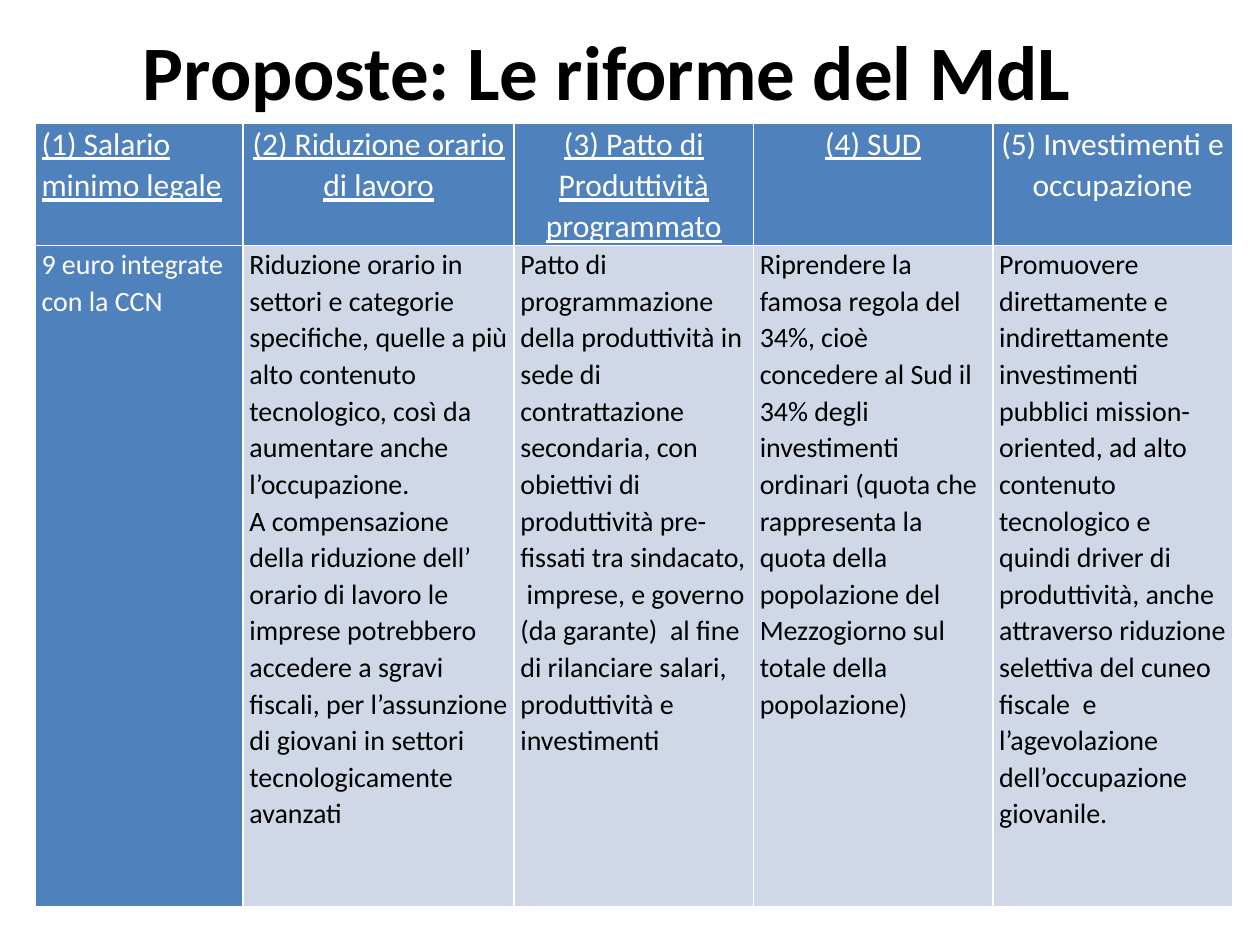
from dataclasses import dataclass

from lxml.etree import SubElement
from pptx import Presentation
from pptx.dml.color import RGBColor
from pptx.enum.text import MSO_ANCHOR as Anchor, PP_ALIGN as Align
from pptx.oxml.ns import qn
from pptx.slide import Slide
from pptx.table import _Cell as Cell
from pptx.text.text import _Paragraph as Paragraph
from pptx.util import Inches, Pt

PAGE_WIDTH, PAGE_HEIGHT = 10, 7.5
TABLE_LEFT, TABLE_TOP = 0.028, 0.13
COLUMN_SHARES = (0.165, 0.215, 0.19, 0.19, 0.19)
ROW_SHARES = (0.13, 0.7)


@dataclass(frozen=True)
class Theme:
    font: str = "Calibri"
    title_size: int = 44
    header_size: int = 18
    body_size: int = 16
    line_spacing: float = 1.07
    border_width: int = 1
    black: str = "000000"
    white: str = "FFFFFF"
    accent: str = "4F81BD"
    pale: str = "D0D8E8"


@dataclass(frozen=True)
class Proposal:
    heading: str
    details: tuple[str, ...]
    underlined: bool = True


THEME = Theme()
TITLE = "Proposte: Le riforme del MdL"
PROPOSALS = (
    Proposal("(1) Salario minimo legale", ("9 euro integrate con la CCN",)),
    Proposal(
        "(2) Riduzione orario di lavoro",
        (
            "Riduzione orario in settori e categorie specifiche, quelle a più alto "
            "contenuto tecnologico, così da aumentare anche l’occupazione.",
            "A compensazione della riduzione dell’ orario di lavoro le imprese "
            "potrebbero accedere a sgravi fiscali, per l’assunzione di giovani in "
            "settori tecnologicamente avanzati",
        ),
    ),
    Proposal(
        "(3) Patto di Produttività programmato",
        (
            "Patto di programmazione della produttività in sede di contrattazione "
            "secondaria, con obiettivi di produttività pre-fissati tra sindacato,  "
            "imprese, e governo (da garante)  al fine di rilanciare salari, "
            "produttività e investimenti",
        ),
    ),
    Proposal(
        "(4) SUD",
        (
            "Riprendere la famosa regola del 34%, cioè concedere al Sud il 34% degli "
            "investimenti ordinari (quota che rappresenta la quota della popolazione "
            "del Mezzogiorno sul totale della popolazione)",
        ),
    ),
    Proposal(
        "(5) Investimenti e occupazione",
        (
            "Promuovere direttamente e indirettamente investimenti pubblici "
            "mission-oriented, ad alto contenuto tecnologico e quindi driver di "
            "produttività, anche attraverso riduzione selettiva del cuneo fiscale  e "
            "l’agevolazione dell’occupazione giovanile.",
        ),
        underlined=False,
    ),
)


def across(share: float) -> int:
    return Inches(PAGE_WIDTH * share)


def down(share: float) -> int:
    return Inches(PAGE_HEIGHT * share)


def add_span(para: Paragraph, text: str, size: int, color: str,
             bold: bool = False, underlined: bool = False) -> None:
    span = para.add_run()
    span.text = text
    span.font.name = THEME.font
    span.font.size = Pt(size)
    span.font.bold = bold
    span.font.underline = underlined
    span.font.color.rgb = RGBColor.from_string(color)


def draw_borders(cell: Cell) -> None:
    properties = cell._tc.get_or_add_tcPr()
    for side in ("lnL", "lnR", "lnT", "lnB"):
        line = SubElement(properties, qn(f"a:{side}"), w=str(Pt(THEME.border_width)))
        paint = SubElement(line, qn("a:solidFill"))
        SubElement(paint, qn("a:srgbClr"), val=THEME.white)


def fill_cell(cell: Cell, texts: tuple[str, ...], size: int, color: str,
              fill: str, align: Align, underlined: bool = False) -> None:
    draw_borders(cell)
    cell.fill.solid()
    cell.fill.fore_color.rgb = RGBColor.from_string(fill)
    cell.margin_left = cell.margin_right = Inches(0.05)
    cell.margin_top = cell.margin_bottom = 0
    frame = cell.text_frame
    for index, text in enumerate(texts):
        para = frame.add_paragraph() if index else frame.paragraphs[0]
        para.alignment = align
        para.line_spacing = THEME.line_spacing
        add_span(para, text, size, color, underlined=underlined)


def draw_title(page: Slide) -> None:
    box = page.shapes.add_textbox(across(0.051), down(0.017), across(0.862), down(0.113))
    frame = box.text_frame
    frame.word_wrap = True
    frame.vertical_anchor = Anchor.MIDDLE
    para = frame.paragraphs[0]
    para.alignment = Align.CENTER
    add_span(para, TITLE, THEME.title_size, THEME.black, bold=True)


def draw_proposals(page: Slide) -> None:
    table = page.shapes.add_table(
        len(ROW_SHARES), len(PROPOSALS), across(TABLE_LEFT), down(TABLE_TOP),
        across(sum(COLUMN_SHARES)), down(sum(ROW_SHARES)),
    ).table
    for column, share in zip(table.columns, COLUMN_SHARES):
        column.width = across(share)
    for row, share in zip(table.rows, ROW_SHARES):
        row.height = down(share)
    for index, proposal in enumerate(PROPOSALS):
        is_first = index == 0
        fill_cell(table.cell(0, index), (proposal.heading,), THEME.header_size,
                  THEME.white, THEME.accent, Align.LEFT if is_first else Align.CENTER,
                  proposal.underlined)
        fill_cell(table.cell(1, index), proposal.details, THEME.body_size,
                  THEME.white if is_first else THEME.black,
                  THEME.accent if is_first else THEME.pale, Align.LEFT)


def main() -> None:
    deck = Presentation()
    deck.slide_width, deck.slide_height = Inches(PAGE_WIDTH), Inches(PAGE_HEIGHT)
    page = deck.slides.add_slide(deck.slide_layouts[6])
    draw_title(page)
    draw_proposals(page)
    deck.save("out.pptx")


if __name__ == "__main__":
    main()
